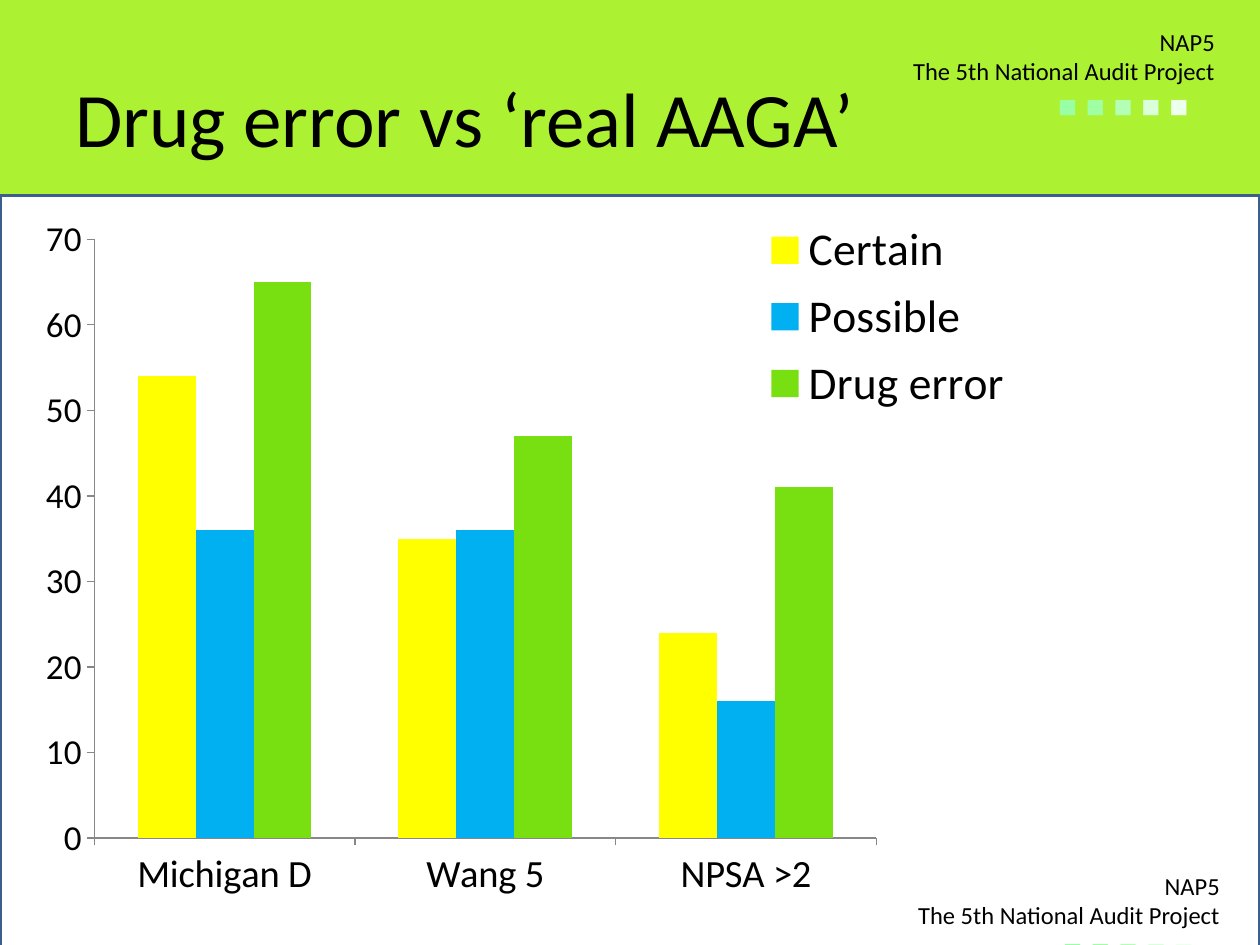
from lxml.etree import SubElement
from pptx import Presentation
from pptx.chart.data import CategoryChartData
from pptx.dml.color import RGBColor
from pptx.enum.chart import XL_CHART_TYPE, XL_LEGEND_POSITION, XL_TICK_MARK
from pptx.enum.shapes import MSO_SHAPE
from pptx.enum.text import MSO_ANCHOR, PP_ALIGN
from pptx.oxml import parse_xml
from pptx.oxml.ns import nsdecls, qn
from pptx.util import Inches, Pt

LIME = RGBColor(0xAD, 0xF2, 0x32)
WHITE = RGBColor(0xFF, 0xFF, 0xFF)
BLACK = RGBColor(0, 0, 0)
PANEL_EDGE = RGBColor(0x3A, 0x5F, 0x8C)
AXIS_GREY = RGBColor(0x87, 0x87, 0x87)
SQUARE_COLORS = [
    RGBColor(0x99, 0xFF, 0xA4),
    RGBColor(0xA0, 0xFF, 0xA3),
    RGBColor(0xB3, 0xFF, 0xB5),
    RGBColor(0xDA, 0xFF, 0xDB),
    RGBColor(0xED, 0xFF, 0xED),
]

CATEGORIES = ["Michigan D", "Wang 5", "NPSA >2"]
SERIES = [
    ("Certain", (54, 35, 24), RGBColor(0xFF, 0xFF, 0x00)),
    ("Possible", (36, 36, 16), RGBColor(0x00, 0xB0, 0xF0)),
    ("Drug error", (65, 47, 41), RGBColor(0x78, 0xDF, 0x11)),
]


def style_font(font, size, color=BLACK, name="Calibri"):
    font.size = Pt(size)
    font.name = name
    font.color.rgb = color


def add_run(paragraph, text, size, color=BLACK, name="Calibri"):
    run = paragraph.add_run()
    run.text = text
    style_font(run.font, size, color, name)


def add_text_frame(slide, left, top, width, height):
    box = slide.shapes.add_textbox(
        Inches(left), Inches(top), Inches(width), Inches(height))
    frame = box.text_frame
    frame.word_wrap = True
    frame.vertical_anchor = MSO_ANCHOR.MIDDLE
    return frame


def add_panel(slide):
    panel = slide.shapes.add_shape(
        MSO_SHAPE.RECTANGLE, Inches(0), Inches(1.55), Inches(10), Inches(6.38))
    panel.shadow.inherit = False
    panel.fill.solid()
    panel.fill.fore_color.rgb = WHITE
    panel.line.color.rgb = PANEL_EDGE
    panel.line.width = Pt(2)


def add_project_label(slide, left, top):
    frame = add_text_frame(slide, left, top, 3.17, 0.79)
    project = frame.paragraphs[0]
    for line in ("NAP5", "The 5th National Audit Project"):
        project.alignment = PP_ALIGN.RIGHT
        add_run(project, line, 14)
        project = frame.add_paragraph()

    # Row of fading squares, indented under the project name
    squares = project
    squares.alignment = PP_ALIGN.LEFT
    properties = squares._p.get_or_add_pPr()
    properties.set("marL", str(Inches(1.73)))
    properties.set("indent", "0")
    last = len(SQUARE_COLORS) - 1
    for index, color in enumerate(SQUARE_COLORS):
        add_run(squares, "■" if index == last else "■ ", 18, color, "Arial")


def add_title(slide, text):
    frame = add_text_frame(slide, 0.5, 0.3, 9, 1.25)
    add_run(frame.paragraphs[0], text, 44)


def make_layout(x, y, w, h, inner=False):
    layout = parse_xml(f"<c:layout {nsdecls('c')}><c:manualLayout/></c:layout>")
    manual = layout[0]
    settings = [("layoutTarget", "inner")] if inner else []
    settings += [("xMode", "edge"), ("yMode", "edge"),
                 ("x", x), ("y", y), ("w", w), ("h", h)]
    for tag, value in settings:
        SubElement(manual, qn(f"c:{tag}")).set("val", str(value))
    return layout


def place_part(part, layout, position):
    for old_layout in part.findall(qn("c:layout")):
        part.remove(old_layout)
    part.insert(position, layout)


def style_axis(axis, size):
    axis.has_major_gridlines = False
    axis.major_tick_mark = XL_TICK_MARK.OUTSIDE
    axis.minor_tick_mark = XL_TICK_MARK.NONE
    axis.format.line.color.rgb = AXIS_GREY
    style_font(axis.tick_labels.font, size)


def add_error_chart(slide):
    data = CategoryChartData()
    data.categories = CATEGORIES
    for name, values, _ in SERIES:
        data.add_series(name, values)
    chart = slide.shapes.add_chart(
        XL_CHART_TYPE.COLUMN_CLUSTERED,
        Inches(0.2), Inches(1.62), Inches(9.13), Inches(5.59), data).chart
    chart.has_title = False
    style_font(chart.font, 10)

    # Columns
    plot = chart.plots[0]
    plot.gap_width = 150
    plot.overlap = 0
    plot.vary_by_categories = False
    for column, (_, _, color) in zip(plot.series, SERIES):
        column.format.fill.solid()
        column.format.fill.fore_color.rgb = color

    # Axes
    style_axis(chart.category_axis, 22)
    style_axis(chart.value_axis, 20)
    chart.value_axis.minimum_scale = 0
    chart.value_axis.maximum_scale = 70
    chart.value_axis.major_unit = 10

    # Legend over the upper right of the plot
    chart.has_legend = True
    chart.legend.position = XL_LEGEND_POSITION.RIGHT
    chart.legend.include_in_layout = False
    style_font(chart.legend.font, 26)

    chart_root = chart.element.find(qn("c:chart"))
    place_part(chart_root.find(qn("c:plotArea")),
               make_layout(0.06, 0.05, 0.68, 0.85, inner=True), 0)
    place_part(chart_root.find(qn("c:legend")),
               make_layout(0.62, 0.01, 0.26, 0.3), 1)


def main():
    presentation = Presentation()
    presentation.slide_width = Inches(10)
    presentation.slide_height = Inches(7.5)
    slide = presentation.slides.add_slide(presentation.slide_layouts[6])
    slide.background.fill.solid()
    slide.background.fill.fore_color.rgb = LIME

    add_panel(slide)
    add_project_label(slide, 6.57, 0.2)
    add_project_label(slide, 6.61, 6.9)
    add_title(slide, "Drug error vs ‘real AAGA’")
    add_error_chart(slide)
    presentation.save("out.pptx")


if __name__ == "__main__":
    main()
